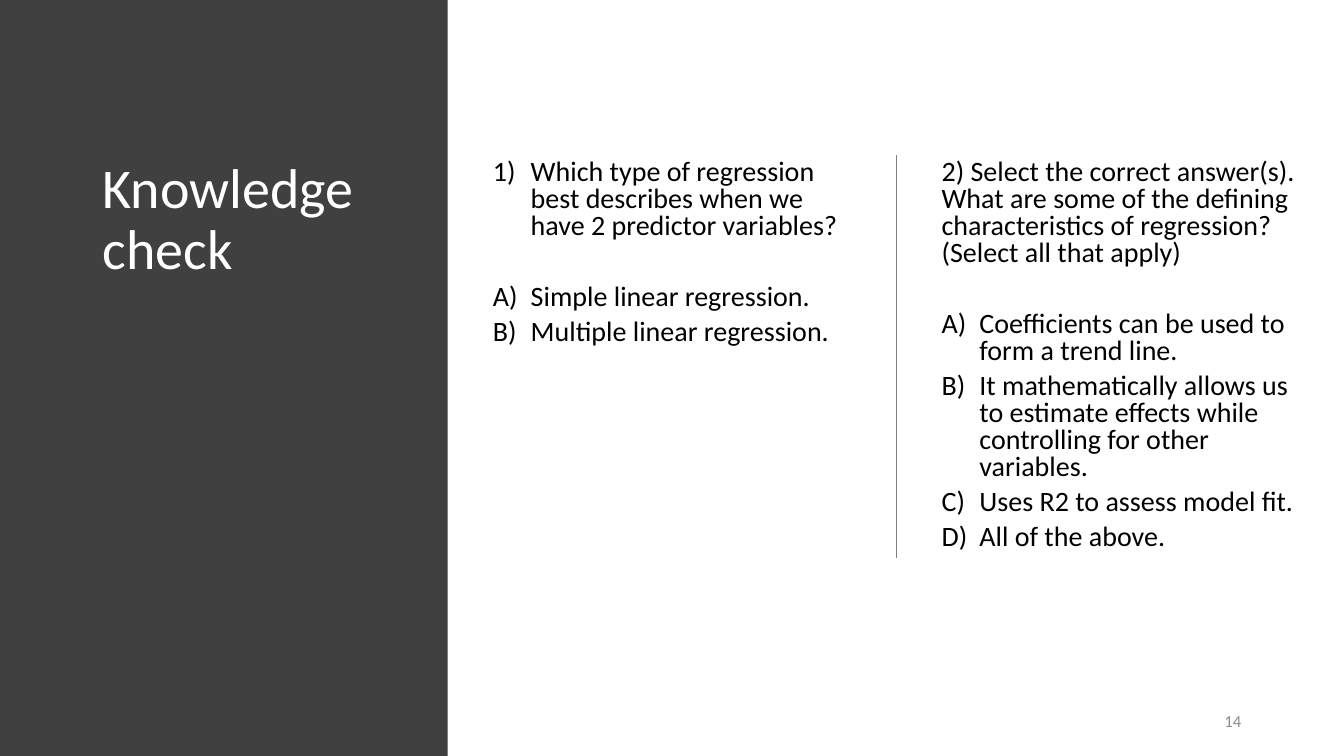
from lxml import etree
from pptx import Presentation
from pptx.dml.color import RGBColor
from pptx.enum.shapes import MSO_CONNECTOR, MSO_SHAPE
from pptx.enum.text import MSO_ANCHOR, PP_ALIGN
from pptx.oxml.ns import qn
from pptx.util import Inches, Pt

RECT = MSO_SHAPE.RECTANGLE
STRAIGHT = MSO_CONNECTOR.STRAIGHT
TOP, MIDDLE = MSO_ANCHOR.TOP, MSO_ANCHOR.MIDDLE
LEFT, RIGHT = PP_ALIGN.LEFT, PP_ALIGN.RIGHT
NUMBER, LETTER = "arabicParenR", "alphaUcParenR"


def rgb(value):
    return RGBColor.from_string(value)


def add_text(tf, text, first=False, size=20, color="000000", font="Calibri",
             align=LEFT, spacing=1.0, after=0, numbering=None):
    p = tf.paragraphs[0] if first else tf.add_paragraph()
    p.alignment, p.line_spacing, p.space_after = align, spacing, Pt(after)
    if numbering:
        pPr = p._p.get_or_add_pPr()
        pPr.set("marL", str(Inches(0.375)))
        pPr.set("indent", str(Inches(-0.375)))
        etree.SubElement(pPr, qn("a:buAutoNum"), type=numbering)
    r = p.add_run()
    r.text = text
    r.font.name, r.font.size, r.font.color.rgb = font, Pt(size), rgb(color)


class SlideBuilder:
    """Draw styled elements on one slide."""

    dark, rule, muted = "404040", "808080", "8C8C8C"

    def __init__(self, slide):
        self.slide = slide

    def panel(self, x, y, w, h):
        sp = self.slide.shapes.add_shape(
            RECT, Inches(x), Inches(y), Inches(w), Inches(h))
        sp.shadow.inherit = False
        sp.fill.solid()
        sp.fill.fore_color.rgb = rgb(self.dark)
        sp.line.fill.background()

    def frame(self, x, y, w, h, anchor=TOP):
        sp = self.slide.shapes.add_textbox(
            Inches(x), Inches(y), Inches(w), Inches(h))
        tf = sp.text_frame
        tf.word_wrap, tf.vertical_anchor = True, anchor
        return tf

    def label(self, text, x, y, w, h, anchor=TOP, **style):
        add_text(self.frame(x, y, w, h, anchor), text, first=True, **style)

    def question(self, x, y, w, h, text, answers, numbering=None):
        tf = self.frame(x, y, w, h)
        add_text(tf, text, first=True, spacing=0.8, after=31.5,
                 numbering=numbering)
        for answer in answers:
            add_text(tf, answer, spacing=0.8, after=6, numbering=LETTER)

    def divider(self, x, top, bottom):
        line = self.slide.shapes.add_connector(
            STRAIGHT, Inches(x), Inches(top), Inches(x), Inches(bottom))
        line.line.color.rgb, line.line.width = rgb(self.rule), Pt(1)
        etree.SubElement(line._element.spPr, qn("a:effectLst"))


def main():
    prs = Presentation()
    prs.slide_width, prs.slide_height = Inches(13.33), Inches(7.5)
    s = SlideBuilder(prs.slides.add_slide(prs.slide_layouts[6]))
    top, height, column = 1.54, 4.77, 3.75

    s.panel(0, 0, 4.44, 7.5)
    s.label("Knowledge check", 0.92, top, 3.17, height,
            size=40, color="FFFFFF", spacing=0.9)
    s.question(
        4.79, top, column, height,
        "Which type of regression best describes when we have 2 predictor "
        "variables?",
        ["Simple linear regression.", "Multiple linear regression."],
        numbering=NUMBER)
    s.divider(8.89, top, top + 4)
    s.question(
        9.24, top, column, height,
        "2) Select the correct answer(s). What are some of the defining "
        "characteristics of regression? (Select all that apply)",
        ["Coefficients can be used to form a trend line.",
         "It mathematically allows us to estimate effects while controlling "
         "for other variables.",
         "Uses R2 to assess model fit.",
         "All of the above."])
    s.label("14", 10.06, 6.95, 2.35, 0.4, anchor=MIDDLE,
            size=12, color=s.muted, align=RIGHT, after=6)
    prs.save("out.pptx")


if __name__ == "__main__":
    main()
